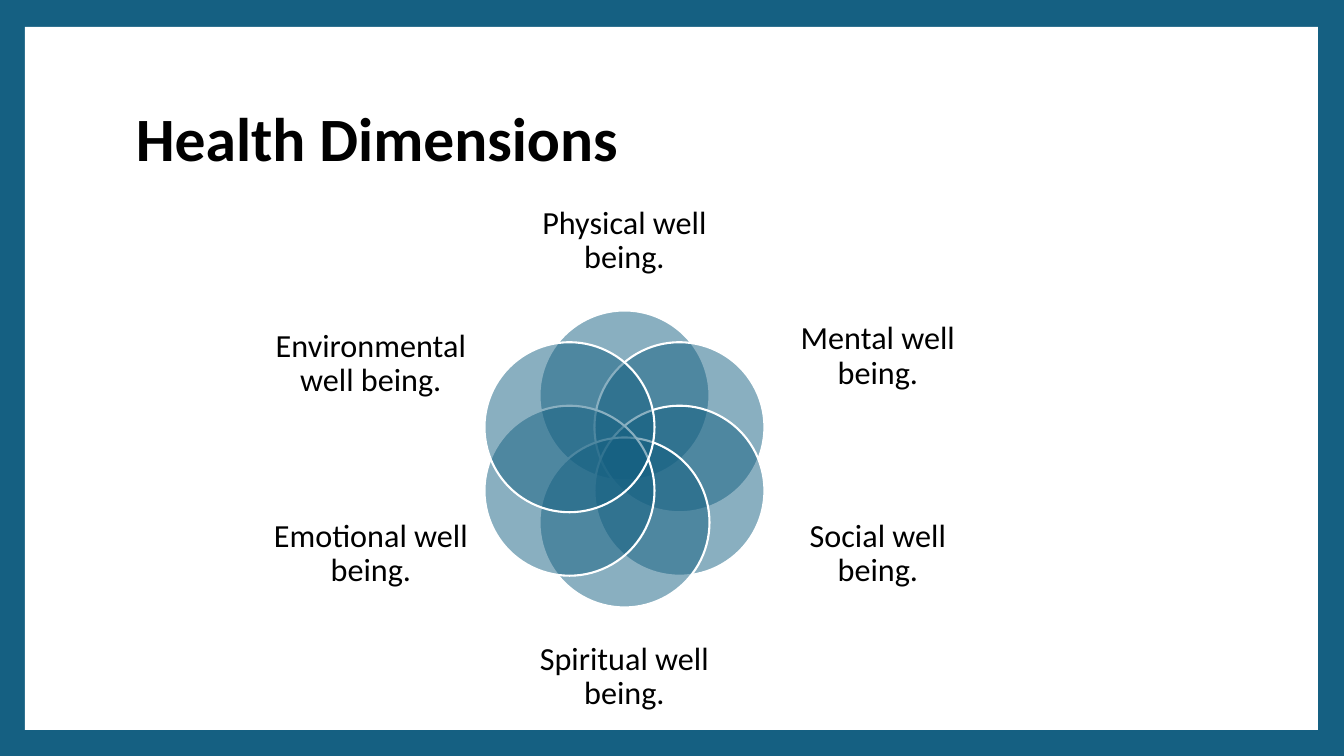
from math import cos, radians, sin

from lxml import etree
from pptx import Presentation
from pptx import util as u
from pptx.dml.color import RGBColor
from pptx.enum import shapes, text
from pptx.oxml import ns

TEAL = RGBColor(0x15, 0x60, 0x82)
WHITE = RGBColor(0xFF, 0xFF, 0xFF)
BLACK = RGBColor(0, 0, 0)
SCALE = 914400 / 100.8
HEAD = {"size": u.Pt(44), "name": "Calibri", "bold": True}
LABEL = {"size": u.Pt(23), "name": "Calibri", "bold": False}
BARE = {"margin_left": 0, "margin_right": 0, "margin_top": 0, "margin_bottom": 0}
LABELS = [
    ("Physical well being.", 248, -276, 213, 116),
    ("Mental well being.", 507, -166, 202, 127),
    ("Social well being.", 507, 24, 202, 142),
    ("Spiritual well being.", 248, 160, 213, 116),
    ("Emotional well being.", 0, 24, 202, 142),
    ("Environmental well being.", 0, -166, 202, 142),
]


def px(*sizes):
    return [u.Emu(round(size * SCALE)) for size in sizes]


def apply(target, values):
    for key, value in values.items():
        setattr(target, key, value)


def write(parent, box, words, style, align, frame):
    body = parent.add_textbox(*px(*box)).text_frame
    apply(body, {"word_wrap": True, "vertical_anchor": text.MSO_ANCHOR.MIDDLE, **frame})
    para = body.paragraphs[0]
    apply(para, {"text": words, "alignment": align, "line_spacing": 0.9})
    font = para.runs[0].font
    apply(font, style)
    font.color.rgb = BLACK


def draw(parent, kind, box, color):
    shape = parent.add_shape(kind, *px(*box))
    shape.shadow.inherit = False
    shape.fill.solid()
    shape.fill.fore_color.rgb = color
    shape.line.fill.background()
    return shape


def petal(parent, box):
    shape = draw(parent, shapes.MSO_SHAPE.OVAL, box, TEAL)
    shape.line.color.rgb = WHITE
    shape.line.width = u.Pt(1.5)
    color = shape.fill._xPr.find(ns.qn("a:solidFill"))[0]
    etree.SubElement(color, ns.qn("a:alpha"), val="50000")


def panel(slide, box):
    slide.background.fill.solid()
    slide.background.fill.fore_color.rgb = TEAL
    draw(slide.shapes, shapes.MSO_SHAPE.RECTANGLE, box, WHITE)


def title(slide, box):
    write(slide.shapes, box, "Health Dimensions", HEAD, text.PP_ALIGN.LEFT, {})


def flower(slide, box):
    left, top, width, height = box
    mid_x, mid_y = left + width / 2, top + height / 2
    size, reach = 170, 63.5
    group = slide.shapes.add_group_shape().shapes
    for step, (words, dx, dy, wide, high) in enumerate(LABELS):
        turn = radians(60 * step - 90)
        x = mid_x + reach * cos(turn) - size / 2
        y = mid_y + reach * sin(turn) - size / 2
        petal(group, (x, y, size, size))
        write(group, (left + dx, mid_y + dy, wide, high), words, LABEL,
              text.PP_ALIGN.CENTER, BARE)


def main():
    deck = Presentation()
    deck.slide_width, deck.slide_height = px(1344, 756)
    slide = deck.slides.add_slide(deck.slide_layouts[6])
    panel(slide, (25, 27, 1293, 703))
    title(slide, (126, 67, 1089, 149))
    flower(slide, (270, 183, 709, 552))
    deck.save("out.pptx")


if __name__ == "__main__":
    main()
